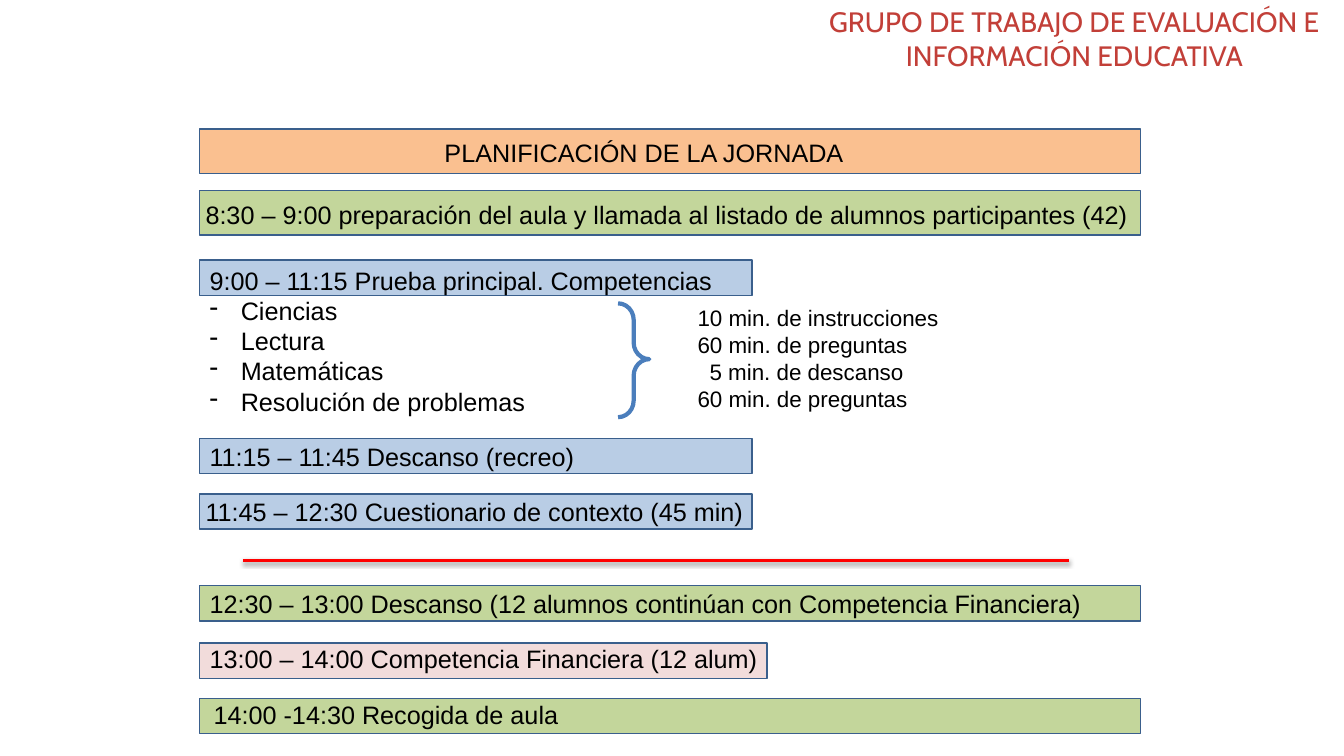
import dataclasses

import lxml.etree
import pptx
import pptx.dml.color
import pptx.enum.shapes
import pptx.enum.text
import pptx.oxml
import pptx.oxml.ns
import pptx.util

PX = 9144  # EMU per px, 100 px to the inch


@dataclasses.dataclass(frozen=True)
class Theme:
    header: str = "C23F38"
    ink: str = "000000"
    orange: str = "FAC090"
    green: str = "C3D69B"
    blue: str = "B9CDE5"
    pink: str = "F2DCDB"
    outline: str = "3A5F8C"
    brace: str = "4B7EBC"
    divider: str = "FF0000"
    header_font: str = "Cabin"
    body_font: str = "Arial"
    header_size: int = 20
    body_size: int = 18
    detail_size: int = 16


def rgb(value):
    return pptx.dml.color.RGBColor.from_string(value)


class SlideBuilder:
    def __init__(self, slide, theme):
        self.shapes = slide.shapes
        self.theme = theme

    def set_line(self, line, color, points):
        line.color.rgb = rgb(color)
        line.width = pptx.util.Pt(points)

    def bar(self, top, width, height, color):
        bar = self.shapes.add_shape(
            pptx.enum.shapes.MSO_SHAPE.RECTANGLE,
            198 * PX, top * PX, width * PX, height * PX)
        bar.shadow.inherit = False
        bar.fill.solid()
        bar.fill.fore_color.rgb = rgb(color)
        self.set_line(bar.line, self.theme.outline, 1)

    def text(self, left, top, width, height, lines, size=None, font=None,
             color=None, align=None):
        box = self.shapes.add_textbox(left * PX, top * PX, width * PX, height * PX)
        frame = box.text_frame
        frame.word_wrap = True
        frame.auto_size = pptx.enum.text.MSO_AUTO_SIZE.SHAPE_TO_FIT_TEXT
        frame.text = "\n".join(lines)
        for paragraph in frame.paragraphs:
            paragraph.alignment = align
            paragraph.font.size = pptx.util.Pt(size or self.theme.body_size)
            paragraph.font.name = font or self.theme.body_font
            paragraph.font.color.rgb = rgb(color or self.theme.ink)
        return frame.paragraphs

    def indent(self, paragraph, margin, bullet=None):
        properties = paragraph._p.get_or_add_pPr()
        properties.set("marL", str(margin * PX))
        if bullet:
            properties.set("indent", str(-margin * PX))
            mark = pptx.oxml.parse_xml(
                f'<a:buChar {pptx.oxml.ns.nsdecls("a")} char="{bullet}"/>')
            properties.insert(0, mark)

    def right_brace(self, left, top, width, height):
        brace = self.shapes.add_shape(
            pptx.enum.shapes.MSO_SHAPE.RIGHT_BRACE,
            left * PX, top * PX, width * PX, height * PX)
        brace.shadow.inherit = False
        brace.adjustments[0] = 0.53
        brace.adjustments[1] = 0.49
        brace.fill.background()
        self.set_line(brace.line, self.theme.brace, 3)

    def divider(self, left, right, y):
        divider = self.shapes.add_connector(
            pptx.enum.shapes.MSO_CONNECTOR.STRAIGHT,
            left * PX, y * PX, right * PX, y * PX)
        self.set_line(divider.line, self.theme.divider, 2)
        qn = pptx.oxml.ns.qn
        effects = lxml.etree.SubElement(divider._element.spPr, qn("a:effectLst"))
        shadow = lxml.etree.SubElement(
            effects, qn("a:outerShdw"), blurRad=str(pptx.util.Pt(3.1)),
            dist=str(pptx.util.Pt(1.6)), dir="5400000", rotWithShape="0")
        black = lxml.etree.SubElement(shadow, qn("a:srgbClr"), val="000000")
        lxml.etree.SubElement(black, qn("a:alpha"), val="38000")


def main():
    theme = Theme()
    deck = pptx.Presentation()
    deck.slide_width, deck.slide_height = 1333 * PX, 750 * PX
    page = SlideBuilder(deck.slides.add_slide(deck.slide_layouts[6]), theme)

    # Header
    page.text(798, 0, 535, 96,
              ["GRUPO DE TRABAJO DE EVALUACIÓN E INFORMACIÓN EDUCATIVA"],
              theme.header_size, theme.header_font, theme.header,
              pptx.enum.text.PP_ALIGN.CENTER)

    # Schedule bars: top, width, height, colour
    for bar in (
        (128, 933, 44, theme.orange),
        (189, 933, 44, theme.green),
        (258, 548, 35, theme.blue),
        (435, 548, 35, theme.blue),
        (490, 548, 35, theme.blue),
        (581, 933, 35, theme.green),
        (638, 563, 35, theme.pink),
        (693, 933, 35, theme.green),
    ):
        page.bar(*bar)

    # Schedule entries: left, top, width, wording
    for left, top, width, entry in (
        (431, 131, 448, "PLANIFICACIÓN DE LA JORNADA"),
        (194, 193, 953, "8:30 – 9:00 preparación del aula y llamada al listado "
                        "de alumnos participantes (42)"),
        (198, 433, 437, "11:15 – 11:45 Descanso (recreo)"),
        (194, 487, 755, "11:45 – 12:30 Cuestionario de contexto (45 min)"),
        (198, 579, 941, "12:30 – 13:00 Descanso (12 alumnos continúan con "
                        "Competencia Financiera)"),
        (198, 633, 680, "13:00 – 14:00 Competencia Financiera (12 alum)"),
        (202, 689, 882, "14:00 -14:30 Recogida de aula"),
    ):
        page.text(left, top, width, 40, [entry])

    # Main test with its competences
    main_test = page.text(198, 258, 754, 162, [
        "9:00 – 11:15 Prueba principal. Competencias",
        "Ciencias", "Lectura", "Matemáticas", "Resolución de problemas"])
    for competence in main_test[1:]:
        page.indent(competence, 31, "-")

    # Timing of the main test
    page.right_brace(613, 301, 31, 113)
    timing = page.text(682, 297, 433, 118, [
        "10 min. de instrucciones", "60 min. de preguntas",
        "5 min. de descanso", "60 min. de preguntas"], theme.detail_size)
    page.indent(timing[2], 12)

    # Divider before the financial part
    page.divider(241, 1060, 556)

    deck.save("out.pptx")


if __name__ == "__main__":
    main()
